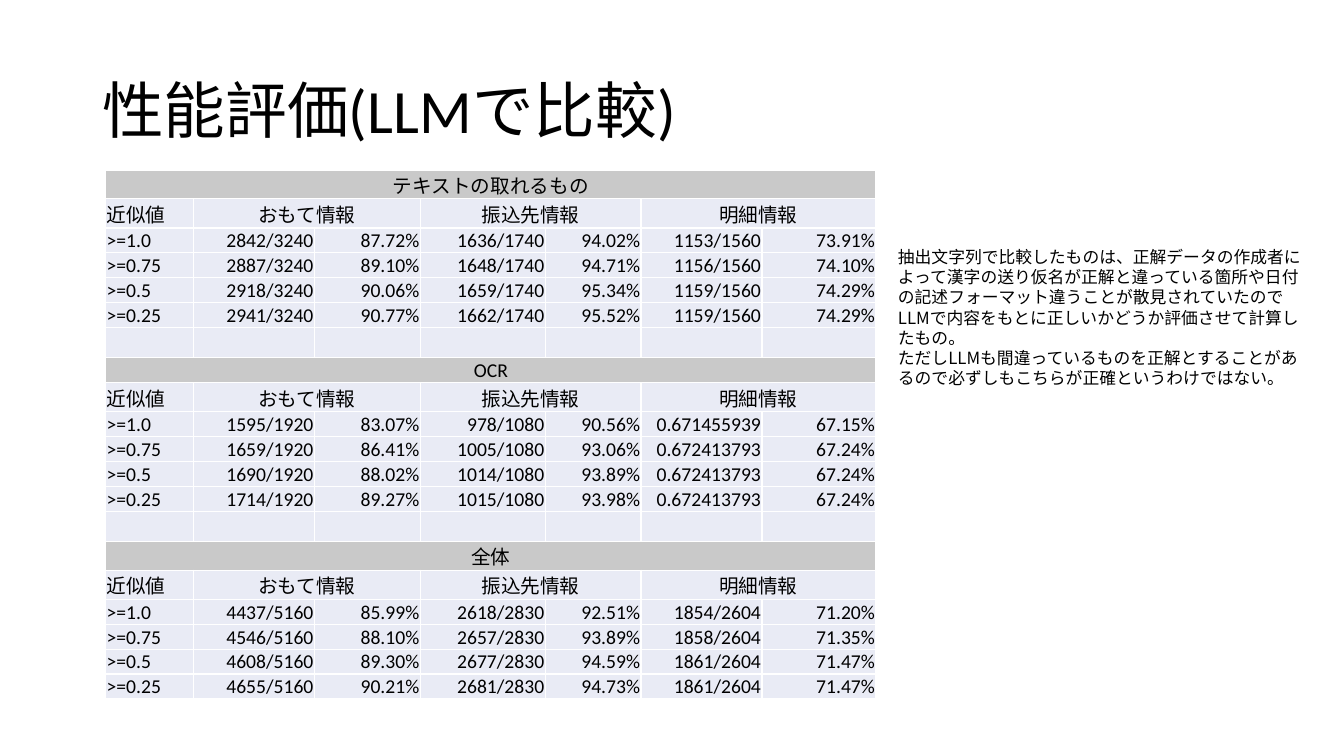
"""Build the slide comparing extraction accuracy as judged by an LLM."""
from lxml.etree import SubElement
from pptx import Presentation
from pptx.dml.color import RGBColor
from pptx.enum.text import MSO_ANCHOR as Anchor, PP_ALIGN as Align
from pptx.oxml.ns import qn
from pptx.util import Pt

JAPANESE_FONT = "Noto Sans CJK JP"
CATEGORIES = ["おもて情報", "振込先情報", "明細情報"]
COLUMN_WIDTHS = [62.6, 86.4, 75.6, 89.3, 68.4, 86.4, 81.4]
HEADER_HEIGHT, VALUE_HEIGHT, GAP_HEIGHT = 21, 17.75, 21.4
SECTIONS = [
    ("テキストの取れるもの", 20.5, [
        [">=1.0", "2842/3240", "87.72%", "1636/1740", "94.02%", "1153/1560", "73.91%"],
        [">=0.75", "2887/3240", "89.10%", "1648/1740", "94.71%", "1156/1560", "74.10%"],
        [">=0.5", "2918/3240", "90.06%", "1659/1740", "95.34%", "1159/1560", "74.29%"],
        [">=0.25", "2941/3240", "90.77%", "1662/1740", "95.52%", "1159/1560", "74.29%"],
    ]),
    ("OCR", 18, [
        [">=1.0", "1595/1920", "83.07%", "978/1080", "90.56%", "0.671455939", "67.15%"],
        [">=0.75", "1659/1920", "86.41%", "1005/1080", "93.06%", "0.672413793", "67.24%"],
        [">=0.5", "1690/1920", "88.02%", "1014/1080", "93.89%", "0.672413793", "67.24%"],
        [">=0.25", "1714/1920", "89.27%", "1015/1080", "93.98%", "0.672413793", "67.24%"],
    ]),
    ("全体", 20.7, [
        [">=1.0", "4437/5160", "85.99%", "2618/2830", "92.51%", "1854/2604", "71.20%"],
        [">=0.75", "4546/5160", "88.10%", "2657/2830", "93.89%", "1858/2604", "71.35%"],
        [">=0.5", "4608/5160", "89.30%", "2677/2830", "94.59%", "1861/2604", "71.47%"],
        [">=0.25", "4655/5160", "90.21%", "2681/2830", "94.73%", "1861/2604", "71.47%"],
    ]),
]
NOTES = [
    "抽出文字列で比較したものは、正解データの作成者によって漢字の送り仮名が正解と違っている箇所や日付の"
    "記述フォーマット違うことが散見されていたのでLLMで内容をもとに正しいかどうか評価させて計算したもの。",
    "ただしLLMも間違っているものを正解とすることがあるので必ずしもこちらが正確というわけではない。",
]


def color(value):
    return RGBColor.from_string(value)


def write(paragraph, text, size, font, **formats):
    run = paragraph.add_run()
    run.text = text
    for name, value in {"size": Pt(size), "name": font}.items():
        setattr(run.font, name, value)
    run.font.color.rgb = color("000000")
    SubElement(run.font._element, qn("a:ea"), typeface=JAPANESE_FONT)
    for name, value in formats.items():
        setattr(paragraph, name, value)


presentation = Presentation()
presentation.slide_width, presentation.slide_height = Pt(960), Pt(540)
slide = presentation.slides.add_slide(presentation.slide_layouts[6])

title = slide.shapes.add_textbox(Pt(66), Pt(28.8), Pt(828), Pt(104.4)).text_frame
title.word_wrap = True
title.vertical_anchor = Anchor.MIDDLE
write(title.paragraphs[0], "性能評価(LLMで比較)", 44, "Calibri", line_spacing=0.9)

rows = []
for heading, heading_height, values in SECTIONS:
    if rows:
        rows.append(("gap", GAP_HEIGHT, [""] * 7))
    rows.append(("heading", heading_height, [heading] + [""] * 6))
    header = ["近似値"] + [text for category in CATEGORIES for text in (category, "")]
    rows.append(("header", HEADER_HEIGHT, header))
    rows += [("value", VALUE_HEIGHT, row) for row in values]

table = slide.shapes.add_table(
    len(rows), len(COLUMN_WIDTHS), Pt(75.6), Pt(121.4),
    Pt(sum(COLUMN_WIDTHS)), Pt(sum(height for _, height, _ in rows))).table
table.first_row = table.horz_banding = False
for column, width in zip(table.columns, COLUMN_WIDTHS):
    column.width = Pt(width)

CELL_FORMAT = {"margin_left": Pt(0.6), "margin_right": Pt(0.6), "margin_top": Pt(0.6),
               "margin_bottom": Pt(0), "vertical_anchor": Anchor.BOTTOM}
for row_index, (kind, height, texts) in enumerate(rows):
    table.rows[row_index].height = Pt(height)
    for column_index, text in enumerate(texts):
        cell = table.cell(row_index, column_index)
        for name, value in CELL_FORMAT.items():
            setattr(cell, name, value)
        properties = cell._tc.get_or_add_tcPr()
        for side in ("a:lnL", "a:lnR", "a:lnT", "a:lnB"):
            border = SubElement(properties, qn(side), w=str(Pt(1)))
            SubElement(SubElement(border, qn("a:solidFill")), qn("a:srgbClr"), val="FFFFFF")
        cell.fill.solid()
        cell.fill.fore_color.rgb = color("C9C9C9" if kind == "heading" else "E9EBF5")
        paragraph = cell.text_frame.paragraphs[0]
        if text:
            alignment = Align.RIGHT if kind == "value" else Align.CENTER
            if column_index == 0 and kind != "heading":
                alignment = Align.LEFT
            write(paragraph, text, 14, "Calibri", alignment=alignment)
        else:
            SubElement(paragraph._p, qn("a:endParaRPr"), sz="1400")
    if kind == "heading":
        table.cell(row_index, 0).merge(table.cell(row_index, 6))
    if kind == "header":
        for first in (1, 3, 5):
            table.cell(row_index, first).merge(table.cell(row_index, first + 1))

notes = slide.shapes.add_textbox(Pt(634.3), Pt(172.8), Pt(306), Pt(123.8)).text_frame
notes.word_wrap = True
for index, text in enumerate(NOTES):
    paragraph = notes.add_paragraph() if index else notes.paragraphs[0]
    write(paragraph, text, 12, JAPANESE_FONT, line_spacing=Pt(14.4))

presentation.save("out.pptx")
